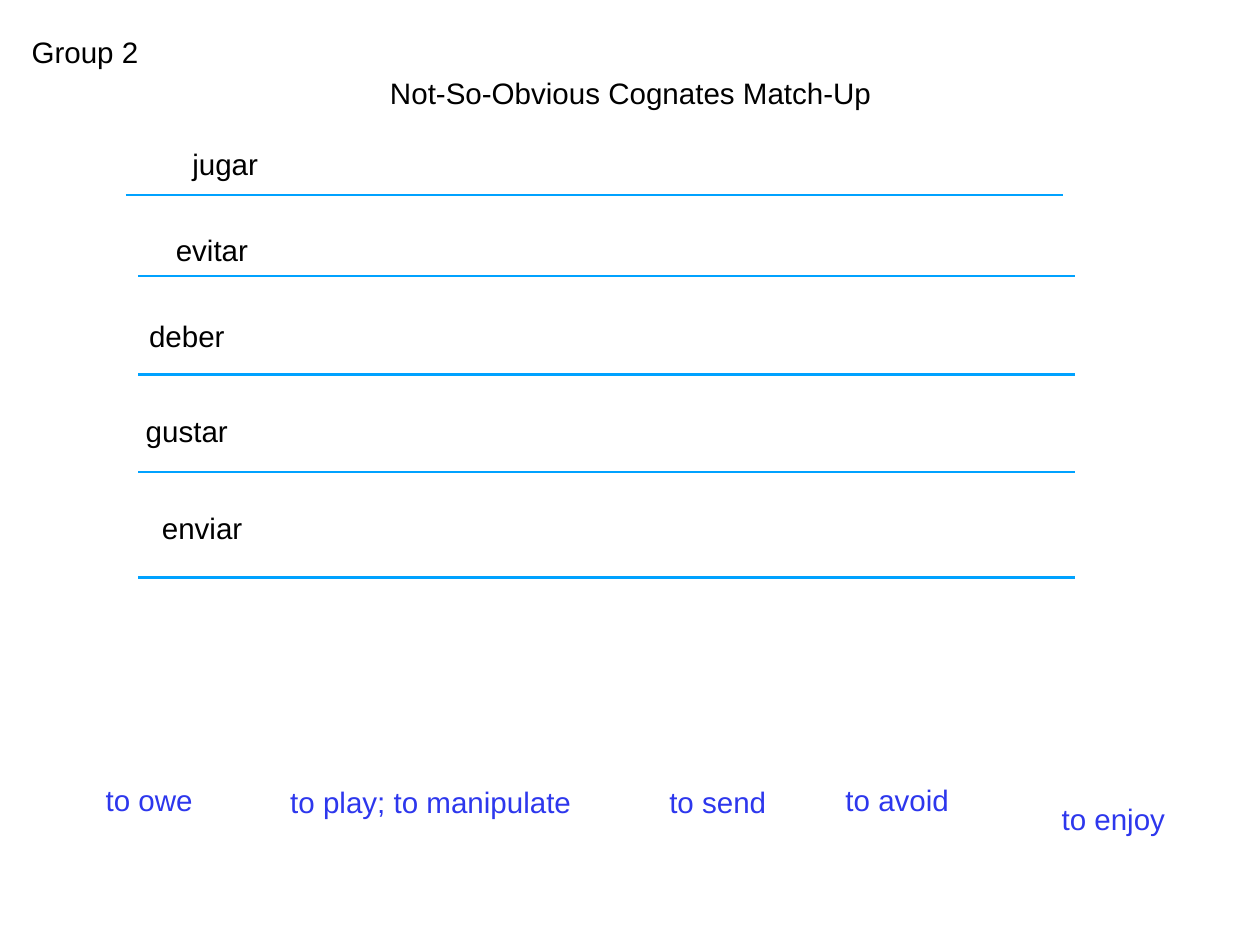
from lxml import etree
from pptx import Presentation
from pptx.dml.color import RGBColor
from pptx.enum.shapes import MSO_CONNECTOR
from pptx.enum.text import MSO_ANCHOR, MSO_AUTO_SIZE, PP_ALIGN
from pptx.oxml.ns import qn
from pptx.util import Cm, Pt

BLACK = RGBColor(0x00, 0x00, 0x00)
ANSWER_BLUE = RGBColor(0x2D, 0x37, 0xED)
RULE_BLUE = RGBColor(0x00, 0xA2, 0xFF)
RULE_LENGTH = 26.85

prs = Presentation()
prs.slide_width = Cm(36.12)
prs.slide_height = Cm(27.1)
slide = prs.slides.add_slide(prs.slide_layouts[6])


def add_label(text, left, top, width, color=BLACK, size=24, font="Arial"):
    """Add one centred, unwrapped line of text; lengths are in centimetres."""
    label = slide.shapes.add_textbox(Cm(left), Cm(top), Cm(width), Cm(1.27))
    frame = label.text_frame
    frame.word_wrap = False
    frame.auto_size = MSO_AUTO_SIZE.SHAPE_TO_FIT_TEXT
    frame.vertical_anchor = MSO_ANCHOR.MIDDLE
    frame.margin_left = frame.margin_right = Cm(0.15)
    frame.margin_top = frame.margin_bottom = Cm(0.15)
    paragraph = frame.paragraphs[0]
    paragraph.alignment = PP_ALIGN.CENTER
    run = paragraph.add_run()
    run.text = text
    run.font.name = font
    run.font.size = Pt(size)
    run.font.color.rgb = color


add_label("Not-So-Obvious Cognates Match-Up", 10.67, 2.01, 14.81)

# Answer rules: left end and height
for left, y in [(3.96, 10.74), (3.96, 13.54), (3.96, 16.56), (3.96, 7.92), (3.61, 5.59)]:
    rule = slide.shapes.add_connector(
        MSO_CONNECTOR.STRAIGHT, Cm(left), Cm(y), Cm(left + RULE_LENGTH), Cm(y))
    rule.line.color.rgb = RULE_BLUE
    rule.line.width = Pt(2)
    etree.SubElement(rule._element.spPr, qn("a:effectLst"))

add_label("Group 2", 0.71, 0.84, 3.45)

spanish_verbs = [
    ("jugar", 5.31, 4.06, 2.29),
    ("evitar", 4.83, 6.53, 2.49),
    ("deber", 4.06, 8.99, 2.59),
    ("gustar", 3.96, 11.73, 2.79),
    ("enviar", 4.45, 14.5, 2.69),
]
for verb, left, top, width in spanish_verbs:
    add_label(verb, left, top, width)

english_meanings = [
    ("to owe", 2.79, 22.3, 2.97),
    ("to play; to manipulate", 7.95, 22.35, 8.79),
    ("to send", 18.95, 22.35, 3.25),
    ("to avoid", 23.98, 22.3, 3.48),
    ("to enjoy", 30.2, 22.83, 3.43),
]
for meaning, left, top, width in english_meanings:
    add_label(meaning, left, top, width, color=ANSWER_BLUE)

prs.save("out.pptx")
